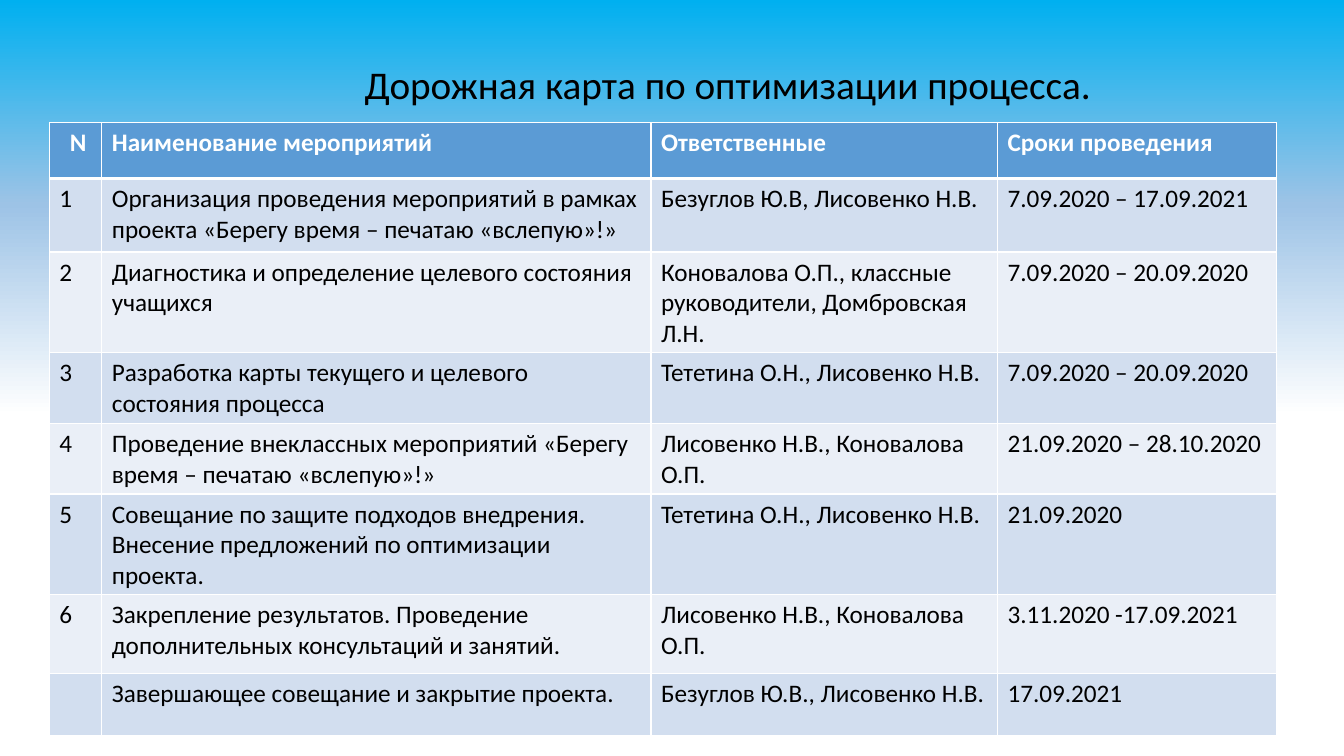
from copy import deepcopy

from lxml.etree import SubElement
from pptx import Presentation
from pptx.dml.color import RGBColor as RGB
from pptx.enum.text import PP_ALIGN as Align
from pptx.oxml.ns import qn
from pptx.util import Pt

PX = 9525
FONT = "Calibri"
COLORS = {
    "sky": "00B0F0", "mist": "9DC3E6", "white": "FFFFFF", "black": "000000",
    "head": "5B9BD5", "odd": "D2DEEF", "even": "EAEFF7",
}
STOPS = [(0, "sky"), (0.27, "mist"), (0.55, "white")]
TITLE = "Дорожная карта по оптимизации процесса."
ROWS = [
    ("N", "Наименование мероприятий", "Ответственные", "Сроки проведения"),
    ("1", "Организация проведения мероприятий в рамках проекта "
          "«Берегу время – печатаю «вслепую»!»",
     "Безуглов Ю.В, Лисовенко Н.В.", "7.09.2020 – 17.09.2021"),
    ("2", "Диагностика и определение целевого состояния учащихся",
     "Коновалова О.П., классные руководители, Домбровская Л.Н.",
     "7.09.2020 – 20.09.2020"),
    ("3", "Разработка карты текущего и целевого состояния процесса",
     "Тететина О.Н., Лисовенко Н.В.", "7.09.2020 – 20.09.2020"),
    ("4", "Проведение внеклассных мероприятий "
          "«Берегу время – печатаю «вслепую»!»",
     "Лисовенко Н.В., Коновалова О.П.", "21.09.2020 – 28.10.2020"),
    ("5", "Совещание по защите подходов внедрения. "
          "Внесение предложений по оптимизации проекта.",
     "Тететина О.Н., Лисовенко Н.В.", "21.09.2020"),
    ("6", "Закрепление результатов. Проведение дополнительных "
          "консультаций и занятий.",
     "Лисовенко Н.В., Коновалова О.П.", "3.11.2020 -17.09.2021"),
    ("", "Завершающее совещание и закрытие проекта.",
     "Безуглов Ю.В., Лисовенко Н.В.", "17.09.2021"),
]
WIDTHS = [50, 523, 330, 266]
HEIGHTS = [53, 70, 95, 66, 66, 95, 75, 59]
TITLE_BOX = (113, 44, 1065, 150)
TABLE_AT = (47, 117)
TITLE_INDENT, N_INDENT = 95, 10


def rgb(name):
    return RGB.from_string(COLORS[name])


def write(para, text, size, color, bold=False, indent=0):
    run = para.add_run()
    run.text = text
    font = run.font
    font.name, font.size, font.bold = FONT, Pt(size), bold
    font.color.rgb = rgb(color)
    if indent:
        props = para._p.get_or_add_pPr()
        props.set("marL", str(indent * PX))
        props.set("indent", "0")


def edge(cell, top, bottom):
    """Draw white cell borders; top and bottom are widths in points."""
    props = cell._tc.get_or_add_tcPr()
    sides = [("L", 1), ("R", 1), ("T", top), ("B", bottom)]
    for i, (side, width) in enumerate(sides):
        line = SubElement(props, qn(f"a:ln{side}"), w=str(Pt(width)))
        fill = SubElement(line, qn("a:solidFill"))
        SubElement(fill, qn("a:srgbClr"), val=COLORS["white"])
        props.insert(i, line)


def paint(slide):
    fill = slide.background.fill
    fill.gradient()
    fill.gradient_angle = 270
    stops = slide.element.find(".//" + qn("a:gsLst"))
    stops.append(deepcopy(stops[-1]))
    for stop, (place, color) in zip(fill.gradient_stops, STOPS):
        stop.position = place
        stop.color.rgb = rgb(color)


def add_title(slide):
    box = slide.shapes.add_textbox(*(n * PX for n in TITLE_BOX))
    frame = box.text_frame
    frame.word_wrap = True
    para = frame.paragraphs[0]
    para.alignment = Align.CENTER
    para.line_spacing = 1.2
    para.space_before = Pt(6)
    write(para, TITLE, 28, "black", indent=TITLE_INDENT)


def add_plan(slide):
    size = (sum(WIDTHS), sum(HEIGHTS))
    place = (n * PX for n in TABLE_AT + size)
    table = slide.shapes.add_table(len(ROWS), len(WIDTHS), *place).table
    for col, width in zip(table.columns, WIDTHS):
        col.width = width * PX
    for r, (texts, height) in enumerate(zip(ROWS, HEIGHTS)):
        table.rows[r].height = height * PX
        head = r == 0
        back = "head" if head else "odd" if r % 2 else "even"
        for c, text in enumerate(texts):
            cell = table.cell(r, c)
            cell.fill.solid()
            cell.fill.fore_color.rgb = rgb(back)
            edge(cell, 3 if r == 1 else 1, 3 if head else 1)
            if text:
                write(cell.text_frame.paragraphs[0], text, 18,
                      "white" if head else "black", head,
                      N_INDENT if head and c == 0 else 0)


def main():
    deck = Presentation()
    deck.slide_width, deck.slide_height = 1280 * PX, 720 * PX
    slide = deck.slides.add_slide(deck.slide_layouts[6])
    paint(slide)
    add_title(slide)
    add_plan(slide)
    deck.save("out.pptx")


if __name__ == "__main__":
    main()
